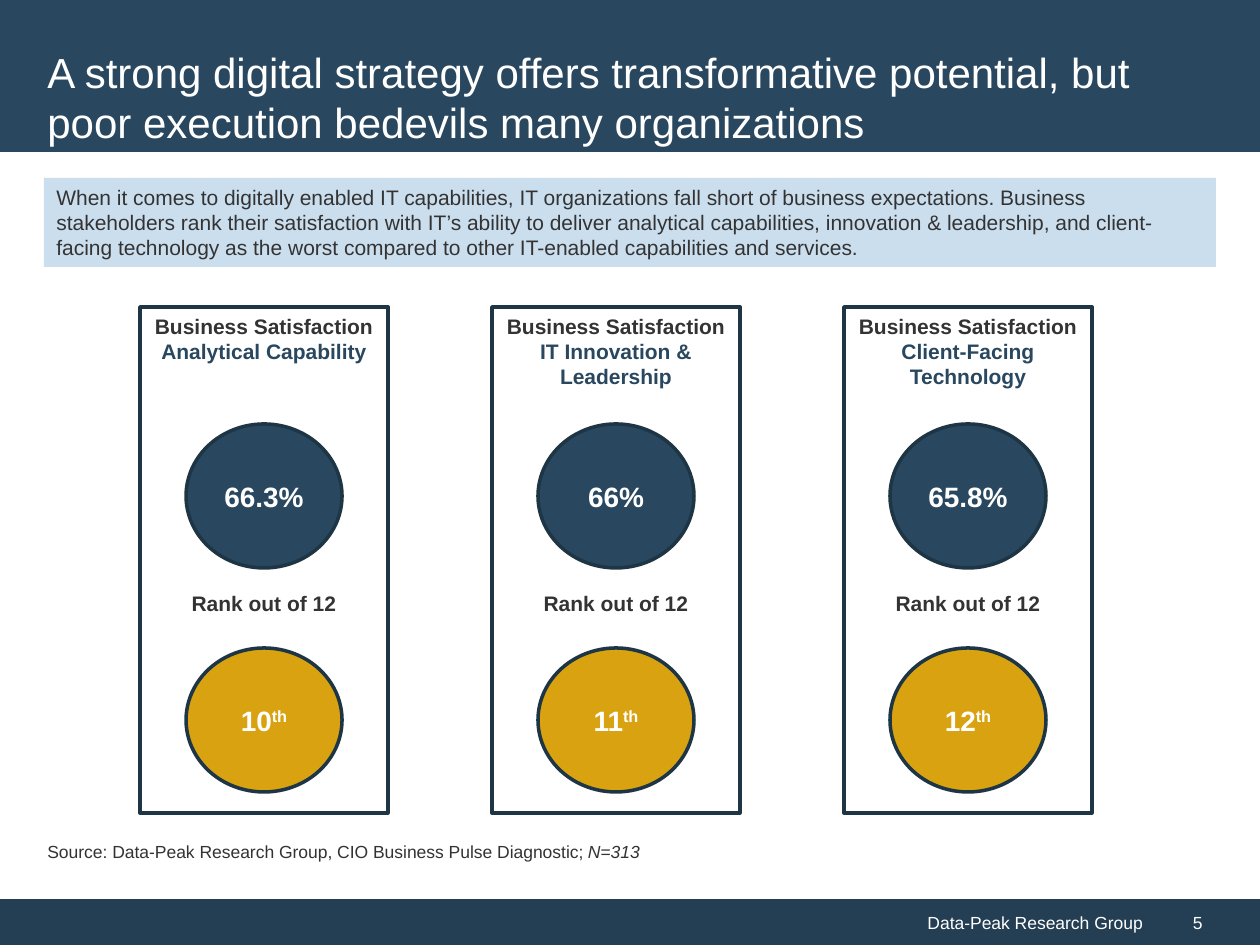
from pptx import Presentation
from pptx.dml.color import RGBColor
from pptx.enum.shapes import MSO_SHAPE as Shape
from pptx.enum.text import MSO_ANCHOR as Anchor, PP_ALIGN as Align
from pptx.util import Emu, Pt

PX = 914400 / 126
COLORS = {
    "navy": "29475F", "footer": "243F54", "outline": "1E3546",
    "gold": "D9A210", "pale": "CBDEEE", "text": "333333", "white": "FFFFFF",
}
GROUP = "Data-Peak Research Group"
CARDS = [
    # capability, lines it takes, satisfaction, rank
    ("Analytical Capability", 1, "66.3%", "10"),
    ("IT Innovation & Leadership", 2, "66%", "11"),
    ("Client-Facing Technology", 2, "65.8%", "12"),
]
CARD_LEFT, CARD_TOP, CARD_W, CARD_H, CARD_PITCH = 140, 307, 248, 506, 352
CIRCLE_W, CIRCLE_H = 156, 144
SCORE_TOP, RANK_TOP = 424, 648
LINE_PT = 14.4


def px(n):
    return Emu(round(n * PX))


def rgb(name):
    return RGBColor.from_string(COLORS[name])


def add_run(p, text, size=12, color="text", bold=False, italic=False, raised=False):
    r = p.add_run()
    r.text = text
    font = r.font
    font.name, font.size, font.bold, font.italic = "Arial", Pt(size), bold, italic
    font.color.rgb = rgb(color)
    if raised:
        r._r.get_or_add_rPr().set("baseline", "30000")


class SlideBuilder:
    def __init__(self, prs):
        self.s = prs.slides.add_slide(prs.slide_layouts[6])

    def frame(self, sp, anchor, align):
        """Set up a text frame and return its first paragraph."""
        tf = sp.text_frame
        tf.word_wrap = True
        tf.vertical_anchor = anchor
        p = tf.paragraphs[0]
        p.alignment = align
        return p

    def shape(self, kind, box, fill=None, line=None, anchor=Anchor.MIDDLE, align=Align.CENTER):
        sp = self.s.shapes.add_shape(kind, *map(px, box))
        sp.shadow.inherit = False
        if fill:
            sp.fill.solid()
            sp.fill.fore_color.rgb = rgb(fill)
        else:
            sp.fill.background()
        if line:
            sp.line.color.rgb = rgb(line)
            sp.line.width = Pt(2)
        else:
            sp.line.fill.background()
        return sp, self.frame(sp, anchor, align)

    def text(self, box, anchor=Anchor.TOP):
        sp = self.s.shapes.add_textbox(*map(px, box))
        return self.frame(sp, anchor, Align.LEFT)

    def circle(self, left, top, fill, value, suffix=""):
        box = (left, top, CIRCLE_W, CIRCLE_H)
        _, p = self.shape(Shape.OVAL, box, fill, "outline")
        add_run(p, value, 16, "white", bold=True)
        if suffix:
            add_run(p, suffix, 16, "white", bold=True, raised=True)

    def card(self, left, capability, lines, score, rank):
        box = (left, CARD_TOP, CARD_W, CARD_H)
        sp, p = self.shape(Shape.RECTANGLE, box, line="outline", anchor=Anchor.TOP)
        add_run(p, "Business Satisfaction", bold=True)
        rows = [(capability, "navy", 0), ("Rank out of 12", "text", (10 - lines) * LINE_PT)]
        for text, color, gap in rows:
            p = sp.text_frame.add_paragraph()
            p.alignment = Align.CENTER
            p.space_before = Pt(gap)
            add_run(p, text, color=color, bold=True)
        circle_left = left + (CARD_W - CIRCLE_W) // 2
        self.circle(circle_left, SCORE_TOP, "navy", score)
        self.circle(circle_left, RANK_TOP, "gold", rank, "th")


def main():
    prs = Presentation()
    prs.slide_width, prs.slide_height = px(1260), px(945)
    b = SlideBuilder(prs)

    _, p = b.shape(Shape.RECTANGLE, (0, 899, 1155, 46), "footer", align=Align.RIGHT)
    add_run(p, GROUP, 10, "white")
    sp, p = b.shape(Shape.RECTANGLE, (1155, 899, 105, 46), "footer", align=Align.LEFT)
    sp.text_frame.margin_left = px(38)
    add_run(p, "5", 10, "white")

    b.shape(Shape.RECTANGLE, (0, 0, 1260, 152), "navy")
    p = b.text((35, 36, 1188, 121), Anchor.MIDDLE)
    add_run(p, "A strong digital strategy offers transformative potential, but poor "
               "execution bedevils many organizations", 24, "white")

    _, p = b.shape(Shape.RECTANGLE, (44, 178, 1172, 89), "pale",
                   anchor=Anchor.TOP, align=Align.LEFT)
    add_run(p, "When it comes to digitally enabled IT capabilities, IT organizations fall "
               "short of business expectations. Business stakeholders rank their "
               "satisfaction with IT’s ability to deliver analytical capabilities, "
               "innovation & leadership, and client-facing technology as the worst "
               "compared to other IT-enabled capabilities and services.")

    for i, card in enumerate(CARDS):
        b.card(CARD_LEFT + i * CARD_PITCH, *card)

    p = b.text((35, 835, 932, 34))
    add_run(p, f"Source: {GROUP}, CIO Business Pulse Diagnostic; ", 10)
    add_run(p, "N=313", 10, italic=True)

    prs.save("out.pptx")


if __name__ == "__main__":
    main()
